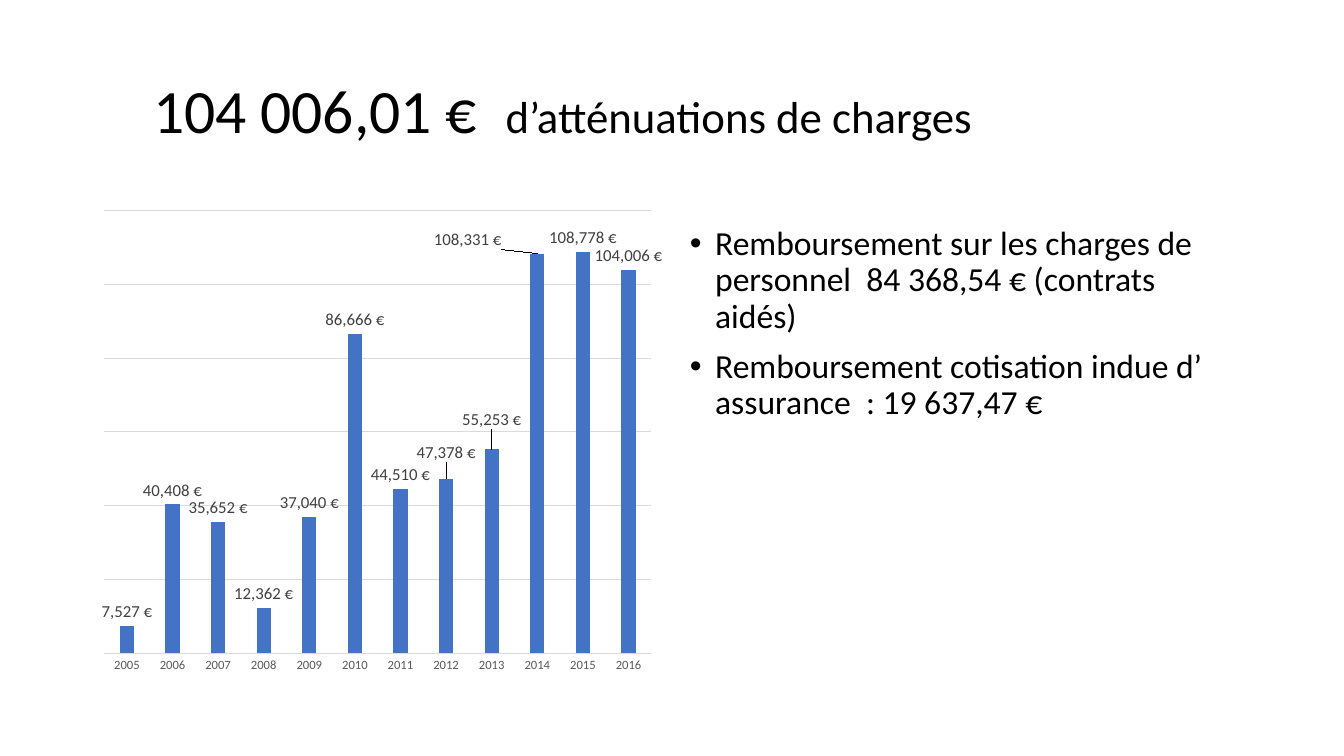
import dataclasses

import lxml.etree
import pptx
import pptx.chart.data
import pptx.dml.color
import pptx.enum.chart
import pptx.enum.text
import pptx.oxml
import pptx.oxml.ns
import pptx.util


@dataclasses.dataclass(frozen=True)
class Theme:
    font: str = "Calibri"
    ink: str = "000000"
    bar: str = "4472C4"
    grid: str = "D9D9D9"
    axis_text: str = "595959"
    label_text: str = "404040"
    amount_size: int = 44
    subject_size: int = 32
    body_size: int = 24
    label_size: int = 12
    chart_size: int = 10
    axis_size: int = 9
    grid_width: float = 0.75


@dataclasses.dataclass(frozen=True)
class Box:
    left: float
    top: float
    width: float
    height: float

    def lengths(self):
        return [
            pptx.util.Inches(share * side)
            for share, side in zip(
                (self.left, self.top, self.width, self.height), SLIDE_SIZE * 2
            )
        ]


THEME = Theme()
SLIDE_SIZE = (13.33, 7.5)
MARGIN = 0.069
COLUMN = 0.425
TITLE_BOX = Box(MARGIN, 0.053, 1 - 2 * MARGIN, 0.193)
CHART_BOX = Box(MARGIN, 0.267, COLUMN, 0.635)
BODY_BOX = Box(1 - MARGIN - COLUMN, 0.293, COLUMN, 0.635)

TITLE = [
    ("\t104 006,01 €  ", THEME.amount_size),
    ("d’atténuations de charges", THEME.subject_size),
]
REFUNDS = [
    "Remboursement sur les charges de personnel  84 368,54 € (contrats aidés)",
    "Remboursement cotisation indue d’ assurance  : 19 637,47 €",
]
FIRST_YEAR = 2005
AMOUNTS = [7527, 40408, 35652, 12362, 37040, 86666,
           44510, 47378, 55253, 108331, 108778, 104006]
EURO_FORMAT = '#,##0\\ "€"'
LABEL_SHIFTS = {2012: (0, -0.025), 2013: (0, -0.033), 2014: (-0.122, 0)}
PLOT_AREA = {"x": 0.02, "y": 0.018, "w": 0.958, "h": 0.923}


def apply(target, values):
    for name, value in values.items():
        setattr(target, name, value)


def color(code):
    return pptx.dml.color.RGBColor.from_string(code)


def style_font(font, size, code):
    apply(font, {"name": THEME.font, "size": pptx.util.Pt(size)})
    font.color.rgb = color(code)


def style_line(line):
    line.color.rgb = color(THEME.grid)
    line.width = pptx.util.Pt(THEME.grid_width)


def add_span(para, text, size):
    span = para.add_run()
    span.text = text
    style_font(span.font, size, THEME.ink)


def add_frame(page, box, anchor):
    frame = page.shapes.add_textbox(*box.lengths()).text_frame
    apply(frame, {"word_wrap": True, "vertical_anchor": anchor})
    return frame


def add_title(page, box):
    frame = add_frame(page, box, pptx.enum.text.MSO_ANCHOR.MIDDLE)
    para = frame.paragraphs[0]
    para.line_spacing = 0.9
    for text, size in TITLE:
        add_span(para, text, size)


def add_bullets(page, box):
    frame = add_frame(page, box, pptx.enum.text.MSO_ANCHOR.TOP)
    indent = pptx.util.Inches(0.25)
    for index, text in enumerate(REFUNDS):
        para = frame.add_paragraph() if index else frame.paragraphs[0]
        apply(para, {"line_spacing": 0.9, "space_before": pptx.util.Pt(10)})
        add_span(para, text, THEME.body_size)
        properties = para._p.get_or_add_pPr()
        properties.set("marL", str(indent))
        properties.set("indent", str(-indent))
        for tag, key, value in (("a:buFont", "typeface", "Arial"), ("a:buChar", "char", "•")):
            bullet = lxml.etree.SubElement(properties, pptx.oxml.ns.qn(tag))
            bullet.set(key, value)


def manual_layout(values):
    layout = pptx.oxml.parse_xml(
        f"<c:layout {pptx.oxml.ns.nsdecls('c')}><c:manualLayout/></c:layout>"
    )
    for tag, value in values.items():
        item = lxml.etree.SubElement(layout[0], pptx.oxml.ns.qn(f"c:{tag}"))
        item.set("val", str(value))
    return layout


def shift_label(series, year, shift):
    index = year - FIRST_YEAR
    label = series.points[index].data_label
    style_font(label.font, THEME.label_size, THEME.label_text)
    label.position = pptx.enum.chart.XL_LABEL_POSITION.OUTSIDE_END
    element = series.data_labels._element.xpath(f"c:dLbl[c:idx/@val='{index}']")[0]
    number_format = lxml.etree.Element(pptx.oxml.ns.qn("c:numFmt"))
    number_format.set("formatCode", EURO_FORMAT)
    number_format.set("sourceLinked", "0")
    element.insert(1, manual_layout(dict(zip("xy", shift))))
    element.insert(2, number_format)


def style_axes(chart):
    no_tick = pptx.enum.chart.XL_TICK_MARK.NONE
    years = chart.category_axis
    apply(years, {"major_tick_mark": no_tick, "minor_tick_mark": no_tick})
    style_font(years.tick_labels.font, THEME.axis_size, THEME.axis_text)
    style_line(years.format.line)
    amounts = chart.value_axis
    apply(amounts, {
        "minimum_scale": 0, "maximum_scale": 120000, "major_unit": 20000,
        "has_major_gridlines": True, "visible": False,
    })
    style_line(amounts.major_gridlines.format.line)


def add_amounts_chart(page, box):
    data = pptx.chart.data.CategoryChartData(number_format=EURO_FORMAT)
    data.categories = [str(FIRST_YEAR + step) for step in range(len(AMOUNTS))]
    data.add_series("Series 1", AMOUNTS)
    chart = page.shapes.add_chart(
        pptx.enum.chart.XL_CHART_TYPE.COLUMN_CLUSTERED, *box.lengths(), data
    ).chart
    apply(chart, {"has_legend": False, "has_title": False})
    style_font(chart.font, THEME.chart_size, THEME.ink)
    style_axes(chart)

    plot = chart.plots[0]
    apply(plot, {"gap_width": 219, "overlap": -27, "vary_by_categories": False})
    series = plot.series[0]
    series.invert_if_negative = False
    series.format.fill.solid()
    series.format.fill.fore_color.rgb = color(THEME.bar)
    labels = series.data_labels
    apply(labels, {
        "show_value": True, "number_format": EURO_FORMAT, "number_format_is_linked": False,
        "position": pptx.enum.chart.XL_LABEL_POSITION.OUTSIDE_END,
    })
    style_font(labels.font, THEME.label_size, THEME.label_text)
    for year, shift in LABEL_SHIFTS.items():
        shift_label(series, year, shift)

    area = chart._chartSpace.chart.plotArea
    for layout in area.findall(pptx.oxml.ns.qn("c:layout")):
        area.remove(layout)
    modes = {"layoutTarget": "inner", "xMode": "edge", "yMode": "edge"}
    area.insert(0, manual_layout({**modes, **PLOT_AREA}))


def main():
    deck = pptx.Presentation()
    deck.slide_width, deck.slide_height = map(pptx.util.Inches, SLIDE_SIZE)
    page = deck.slides.add_slide(deck.slide_layouts[6])
    add_title(page, TITLE_BOX)
    add_bullets(page, BODY_BOX)
    add_amounts_chart(page, CHART_BOX)
    deck.save("out.pptx")


if __name__ == "__main__":
    main()
